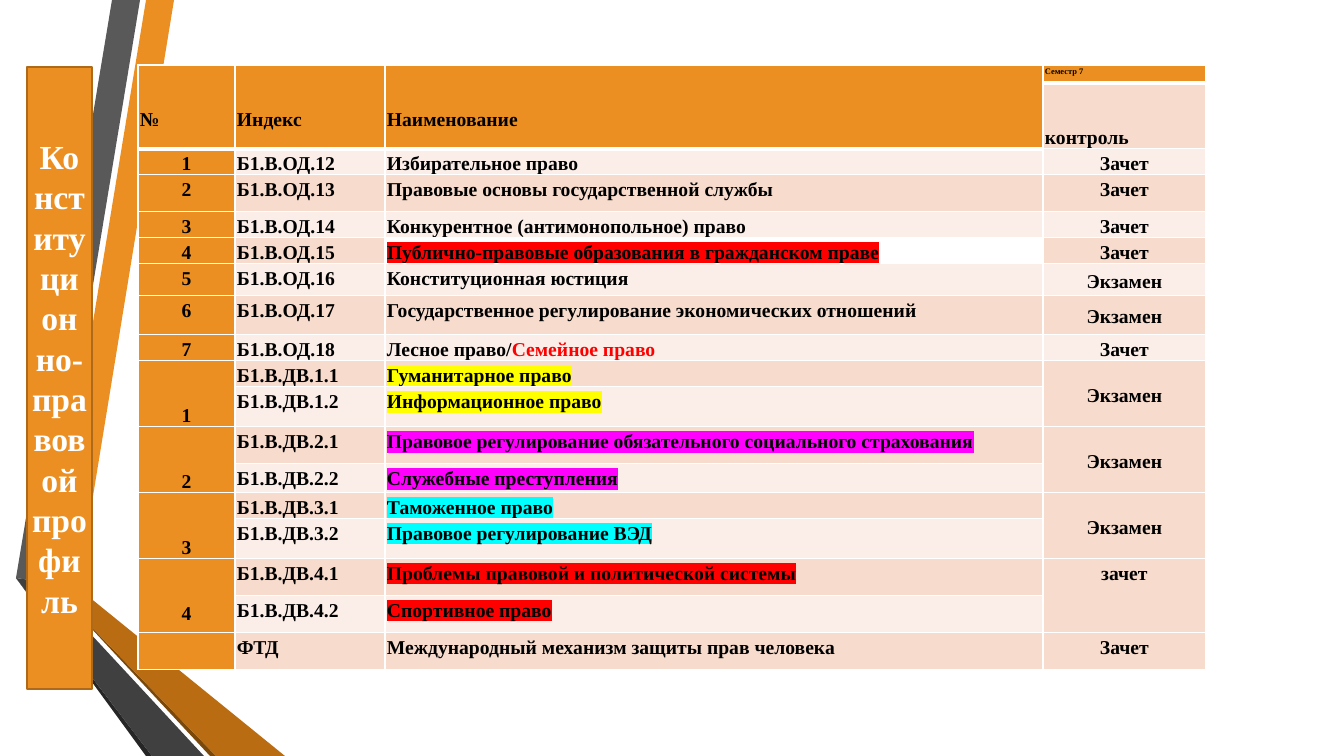
"""Build the slide with the course table of the constitutional law profile."""
import lxml.etree
import pptx
import pptx.dml.color
import pptx.enum.text
import pptx.oxml
import pptx.oxml.ns
import pptx.util

RGB = pptx.dml.color.RGBColor
ORANGE = RGB(0xEB, 0x8F, 0x22)
DARK_ORANGE = RGB(0xAE, 0x6A, 0x19)
BROWN = RGB(0xB9, 0x6C, 0x11)
DEEP_BROWN = RGB(0x7B, 0x48, 0x0B)
GRAY = RGB(0x59, 0x59, 0x59)
DARK_GRAY = RGB(0x40, 0x40, 0x40)
CHARCOAL = RGB(0x26, 0x26, 0x26)
PEACH = RGB(0xF7, 0xDB, 0xCC)
PALE_PEACH = RGB(0xFB, 0xEE, 0xE8)
WHITE = RGB(0xFF, 0xFF, 0xFF)
BLACK = RGB(0x00, 0x00, 0x00)
RED = RGB(0xFF, 0x00, 0x00)
YELLOW = RGB(0xFF, 0xFF, 0x00)
MAGENTA = RGB(0xFF, 0x00, 0xFF)
CYAN = RGB(0x00, 0xFF, 0xFF)

FONT = "Times New Roman"
LEFT = pptx.enum.text.PP_ALIGN.LEFT
CENTER = pptx.enum.text.PP_ALIGN.CENTER
LOWERED = 41

RIBBONS = [
    (ORANGE, [(50, 583), (78, 588), (174, 0), (146, 0)]),
    (GRAY, [(140, 0), (112, 0), (16, 578), (44, 582)]),
    (CHARCOAL, [(16, 578), (146, 756), (152, 756)]),
    (DEEP_BROWN, [(50, 584), (210, 756), (216, 756)]),
    (BROWN, [(50, 584), (216, 756), (285, 756), (78, 588), (50, 583)]),
    (DARK_GRAY, [(204, 756), (48, 588), (43, 583), (44, 582), (16, 578), (152, 756)]),
]

COLUMN_WIDTHS = [97, 150, 658, 163]
ROW_HEIGHTS = [18, 64, 26, 37, 25, 26, 32, 39, 26, 26, 38, 37, 28, 26, 37, 37, 37, 37]
HEADINGS = ["№", "Индекс", "Наименование"]
FIRST_COURSE_ROW = 2
FIRST_ELECTIVE_ROW = 9
MARKED_COURSE_ROW = 5

COURSES = [
    ("1", "Б1.В.ОД.12", "Избирательное право", None, "Зачет"),
    ("2", "Б1.В.ОД.13", "Правовые основы государственной службы", None, "Зачет"),
    ("3", "Б1.В.ОД.14", "Конкурентное (антимонопольное) право", None, "Зачет"),
    ("4", "Б1.В.ОД.15", "Публично-правовые образования в гражданском праве", RED, "Зачет"),
    ("5", "Б1.В.ОД.16", "Конституционная юстиция", None, "Экзамен"),
    ("6", "Б1.В.ОД.17", "Государственное регулирование экономических отношений", None, "Экзамен"),
    ("7", "Б1.В.ОД.18", "Лесное право/", None, "Зачет"),
    ("1", "Б1.В.ДВ.1.1", "Гуманитарное право", YELLOW, "Экзамен"),
    ("", "Б1.В.ДВ.1.2", "Информационное право", YELLOW, ""),
    ("2", "Б1.В.ДВ.2.1", "Правовое регулирование обязательного социального страхования",
     MAGENTA, "Экзамен"),
    ("", "Б1.В.ДВ.2.2", "Служебные преступления", MAGENTA, ""),
    ("3", "Б1.В.ДВ.3.1", "Таможенное право", CYAN, "Экзамен"),
    ("", "Б1.В.ДВ.3.2", "Правовое регулирование ВЭД", CYAN, ""),
    ("4", "Б1.В.ДВ.4.1", "Проблемы правовой и политической системы", RED, "зачет"),
    ("", "Б1.В.ДВ.4.2", "Спортивное право", RED, ""),
    ("", "ФТД", "Международный механизм защиты прав человека", None, "Зачет"),
]


def px(length):
    """Turn pixels into EMU."""
    return pptx.util.Emu(round(length * 914400 / 100.8))


def add_ribbon(slide, color, points):
    """Draw one flat polygon of the background ribbon."""
    builder = slide.shapes.build_freeform(*points[0], scale=914400 / 100.8)
    builder.add_line_segments(points[1:], close=True)
    ribbon = builder.convert_to_shape()
    ribbon.fill.solid()
    ribbon.fill.fore_color.rgb = color
    ribbon.line.fill.background()
    ribbon.shadow.inherit = False


def add_run(paragraph, text, size=14, color=BLACK, highlight=None):
    """Add a bold run, highlighted if asked."""
    run = paragraph.add_run()
    run.text = text
    run.font.size = pptx.util.Pt(size)
    run.font.bold = True
    run.font.color.rgb = color
    if highlight is not None:
        marker = lxml.etree.SubElement(run.font._element, pptx.oxml.ns.qn("a:highlight"))
        lxml.etree.SubElement(marker, pptx.oxml.ns.qn("a:srgbClr"), val=str(highlight))
    run.font.name = FONT


def place_profile_title(slide):
    """Turn the title into the upright bar at the left, above the ribbons."""
    profile = slide.shapes.title
    profile.left, profile.top, profile.width, profile.height = map(px, (27, 67, 65, 622))
    profile.fill.solid()
    profile.fill.fore_color.rgb = ORANGE
    profile.line.color.rgb = DARK_ORANGE
    profile.line.width = pptx.util.Pt(1.25)
    frame = profile.text_frame
    frame.word_wrap = True
    frame.auto_size = pptx.enum.text.MSO_AUTO_SIZE.NONE
    frame.vertical_anchor = pptx.enum.text.MSO_ANCHOR.MIDDLE
    frame._txBody.bodyPr.set("vert", "vert270")
    frame.paragraphs[0].alignment = CENTER
    add_run(frame.paragraphs[0], "Конституционно-правовой профиль", 24, WHITE)
    profile.element.getparent().append(profile.element)


def add_borders(cell, heavy_sides):
    """Give a cell white borders, thick on the named sides."""
    properties = cell._tc.get_or_add_tcPr()
    for side in "LRTB":
        width = pptx.util.Pt(3 if side in heavy_sides else 1)
        properties.append(pptx.oxml.parse_xml(
            f'<a:ln{side} {pptx.oxml.ns.nsdecls("a")} w="{width}"><a:solidFill>'
            f'<a:srgbClr val="{WHITE}"/></a:solidFill></a:ln{side}>'))


def style_cell(cell, row, column):
    """Set the margins, borders and banded fill of a cell."""
    cell.margin_left = cell.margin_right = px(2)
    cell.margin_top, cell.margin_bottom = px(1), 0
    heading_end = 0 if column == 3 else 1
    heavy_sides = {heading_end: "B", heading_end + 1: "T"}.get(row, "")
    add_borders(cell, heavy_sides)
    if row == 0 or column == 0:
        color = ORANGE
    elif (row, column) == (MARKED_COURSE_ROW, 2):
        color = WHITE
    else:
        color = PEACH if row % 2 else PALE_PEACH
    cell.fill.solid()
    cell.fill.fore_color.rgb = color


def write_cell(cell, text, alignment=LEFT, top=1, **run_format):
    """Write one paragraph into a cell and return it."""
    cell.margin_top = px(top)
    paragraph = cell.text_frame.paragraphs[0]
    paragraph.alignment = alignment
    paragraph.line_spacing = 1.15
    paragraph.space_after = pptx.util.Pt(10)
    add_run(paragraph, text, **run_format)
    return paragraph


def write_course(table, row, course):
    """Fill one table row with a course."""
    number, index, name, highlight, control = course
    if number:
        top = LOWERED if row >= FIRST_ELECTIVE_ROW else 1
        write_cell(table.cell(row, 0), number, CENTER, top)
    write_cell(table.cell(row, 1), index)
    name_line = write_cell(table.cell(row, 2), name, highlight=highlight)
    if name.endswith("/"):
        add_run(name_line, "Семейное право", color=RED)
    if control:
        write_cell(table.cell(row, 3), control, CENTER)
    if control == "Экзамен":
        table.cell(row, 3).vertical_anchor = pptx.enum.text.MSO_ANCHOR.MIDDLE


def add_course_table(slide):
    """Add the table of courses with its merged headings and electives."""
    table = slide.shapes.add_table(
        len(ROW_HEIGHTS), len(COLUMN_WIDTHS), px(138), px(65),
        px(sum(COLUMN_WIDTHS)), px(sum(ROW_HEIGHTS))).table
    for column, width in zip(table.columns, COLUMN_WIDTHS):
        column.width = px(width)
    for row, height in enumerate(ROW_HEIGHTS):
        table.rows[row].height = px(height)
        for column in range(len(COLUMN_WIDTHS)):
            style_cell(table.cell(row, column), row, column)
    for column, heading in enumerate(HEADINGS):
        table.cell(0, column).merge(table.cell(1, column))
        write_cell(table.cell(0, column), heading, top=LOWERED)
    write_cell(table.cell(0, 3), "Семестр 7", size=6)
    write_cell(table.cell(1, 3), "контроль", top=LOWERED)
    for row in range(FIRST_ELECTIVE_ROW, len(ROW_HEIGHTS) - 1, 2):
        for column in (0, 3):
            table.cell(row, column).merge(table.cell(row + 1, column))
    for row, course in enumerate(COURSES, FIRST_COURSE_ROW):
        write_course(table, row, course)


def main():
    """Build and save the slide."""
    deck = pptx.Presentation()
    deck.slide_width, deck.slide_height = px(1344), px(756)
    slide = deck.slides.add_slide(deck.slide_layouts[5])
    for color, points in RIBBONS:
        add_ribbon(slide, color, points)
    place_profile_title(slide)
    add_course_table(slide)
    deck.save("out.pptx")


if __name__ == "__main__":
    main()
